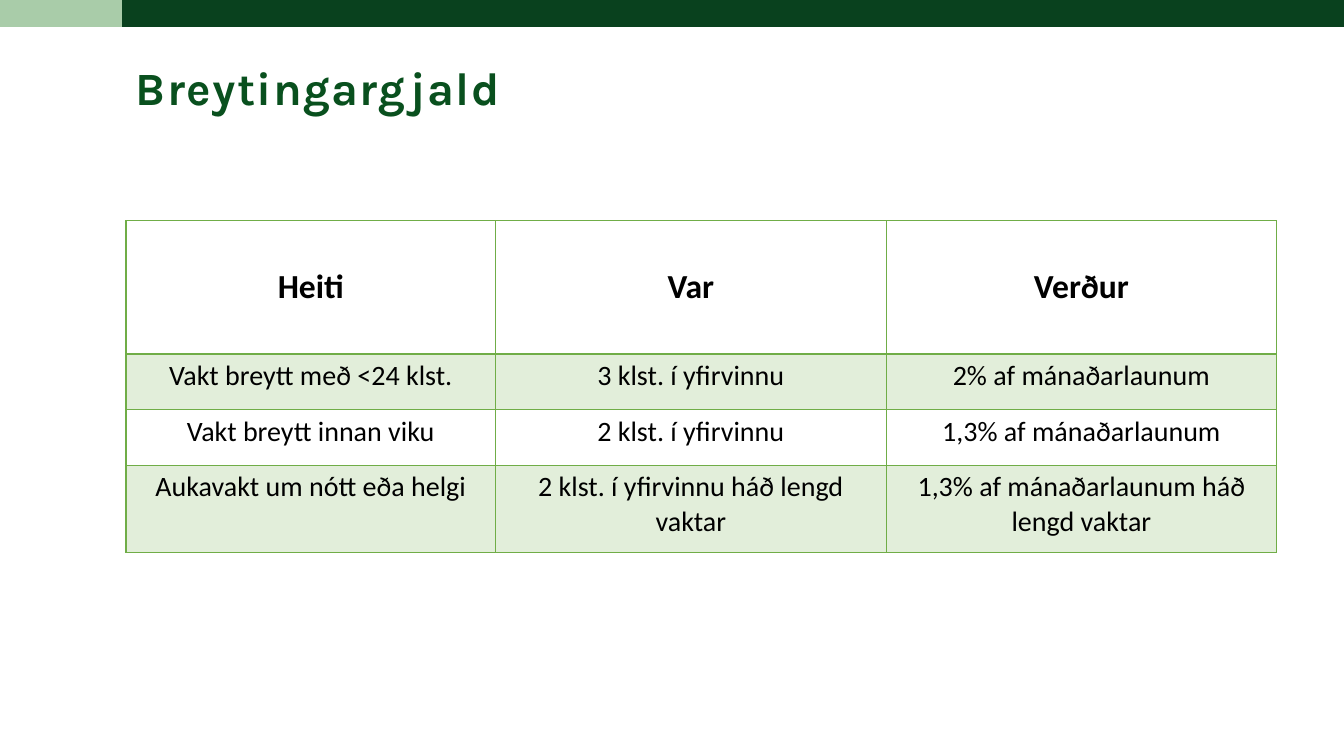
from dataclasses import dataclass
from typing import Any

import lxml.etree
import pptx
import pptx.dml.color
import pptx.enum.shapes
import pptx.enum.text
import pptx.oxml.ns
import pptx.util

Pt = pptx.util.Pt
qn = pptx.oxml.ns.qn

COLORS = {
    "dark": "09411E",
    "pale": "A9CCA9",
    "title": "09501E",
    "grid": "70AD47",
    "text": "000000",
}


@dataclass
class Bar:
    left: float
    width: float
    color: str


@dataclass
class Row:
    height: float
    texts: tuple[str, str, str]
    header: bool = False
    shaded: bool = False


BAR_HEIGHT = 19.25
BARS = [Bar(87, 873, "dark"), Bar(0, 87, "pale")]
COLUMNS = [264, 279, 279]
ROWS = [
    Row(95, ("Heiti", "Var", "Verður"), header=True),
    Row(39.75, ("Vakt breytt með <24 klst.", "3 klst. í yfirvinnu",
                "2% af mánaðarlaunum"), shaded=True),
    Row(39.75, ("Vakt breytt innan viku", "2 klst. í yfirvinnu",
                "1,3% af mánaðarlaunum")),
    Row(62.5, ("Aukavakt um nótt eða helgi", "2 klst. í yfirvinnu háð lengd vaktar",
               "1,3% af mánaðarlaunum háð lengd vaktar"), shaded=True),
]


def rgb(name: str) -> pptx.dml.color.RGBColor:
    return pptx.dml.color.RGBColor.from_string(COLORS[name])


def add_run(p: Any, text: str, color: str, **font: Any) -> Any:
    r = p.add_run()
    r.text = text
    for key, value in font.items():
        setattr(r.font, key, value)
    r.font.color.rgb = rgb(color)
    return r


def add_bar(slide: Any, bar: Bar) -> None:
    s = slide.shapes.add_shape(pptx.enum.shapes.MSO_SHAPE.RECTANGLE,
                               Pt(bar.left), 0, Pt(bar.width), Pt(BAR_HEIGHT))
    s.shadow.inherit = False
    s.fill.solid()
    s.fill.fore_color.rgb = rgb(bar.color)
    s.line.fill.background()


def add_title(slide: Any, text: str) -> None:
    tf = slide.shapes.add_textbox(Pt(90), Pt(43), Pt(780), Pt(62)).text_frame
    tf.word_wrap = True
    p = tf.paragraphs[0]
    p.line_spacing = 0.9
    r = add_run(p, text, "title", name="Karla", size=Pt(33), bold=True)
    r.font._element.set("spc", "100")


def add_border(cell: Any, side: str, width: float) -> None:
    ln = lxml.etree.SubElement(cell._tc.get_or_add_tcPr(), qn(f"a:ln{side}"),
                               w=str(int(Pt(width))))
    fill = lxml.etree.SubElement(ln, qn("a:solidFill"))
    lxml.etree.SubElement(fill, qn("a:srgbClr"), val=COLORS["grid"])


def fill_cell(cell: Any, row: Row, text: str, below_header: bool) -> None:
    anchors = pptx.enum.text.MSO_ANCHOR
    cell.vertical_anchor = anchors.MIDDLE if row.header else anchors.TOP
    p = cell.text_frame.paragraphs[0]
    p.alignment = pptx.enum.text.PP_ALIGN.CENTER
    add_run(p, text, "text", name="Calibri", size=Pt(24 if row.header else 20), bold=row.header)
    widths = {"L": 1, "R": 1, "T": 2 if below_header else 1, "B": 2 if row.header else 1}
    for side, width in widths.items():
        add_border(cell, side, width)
    if row.shaded:
        cell.fill.solid()
        cell.fill.fore_color.rgb = rgb("grid")
        tint = cell._tc.tcPr.find(f"{qn('a:solidFill')}/{qn('a:srgbClr')}")
        lxml.etree.SubElement(tint, qn("a:alpha"), val="20000")
    else:
        cell.fill.background()


def add_fee_table(slide: Any) -> None:
    height = sum(row.height for row in ROWS)
    table = slide.shapes.add_table(len(ROWS), len(COLUMNS), Pt(90), Pt(157.75),
                                   Pt(sum(COLUMNS)), Pt(height)).table
    table.first_row = table.horz_banding = False
    for column, width in zip(table.columns, COLUMNS):
        column.width = Pt(width)
    for i, row in enumerate(ROWS):
        table.rows[i].height = Pt(row.height)
        for j, text in enumerate(row.texts):
            fill_cell(table.cell(i, j), row, text, i == 1)


def main() -> None:
    prs = pptx.Presentation()
    prs.slide_width, prs.slide_height = Pt(960), Pt(540)
    slide = prs.slides.add_slide(prs.slide_layouts[6])
    for bar in BARS:
        add_bar(slide, bar)
    add_title(slide, "Breytingargjald")
    add_fee_table(slide)
    prs.save("out.pptx")


if __name__ == "__main__":
    main()
